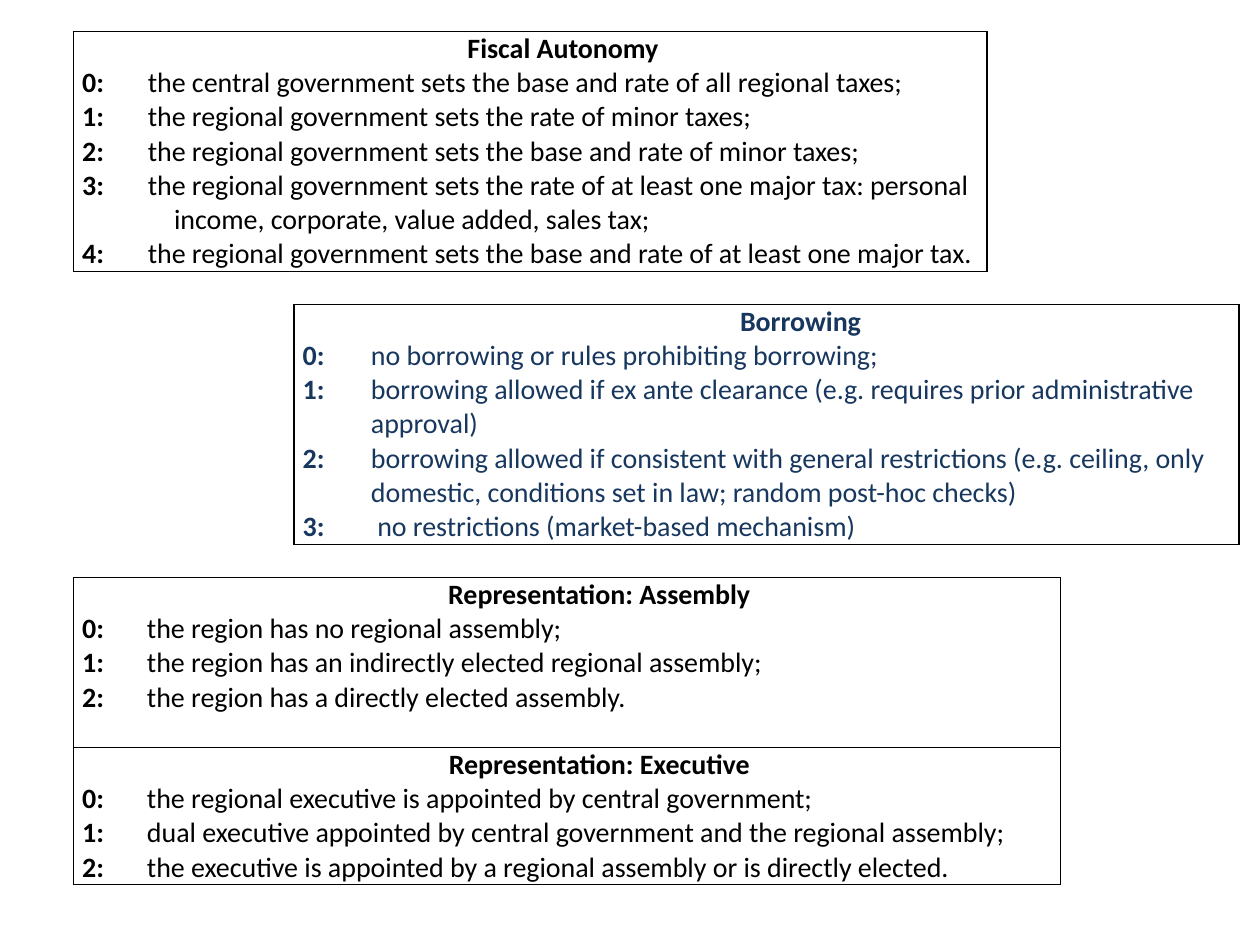
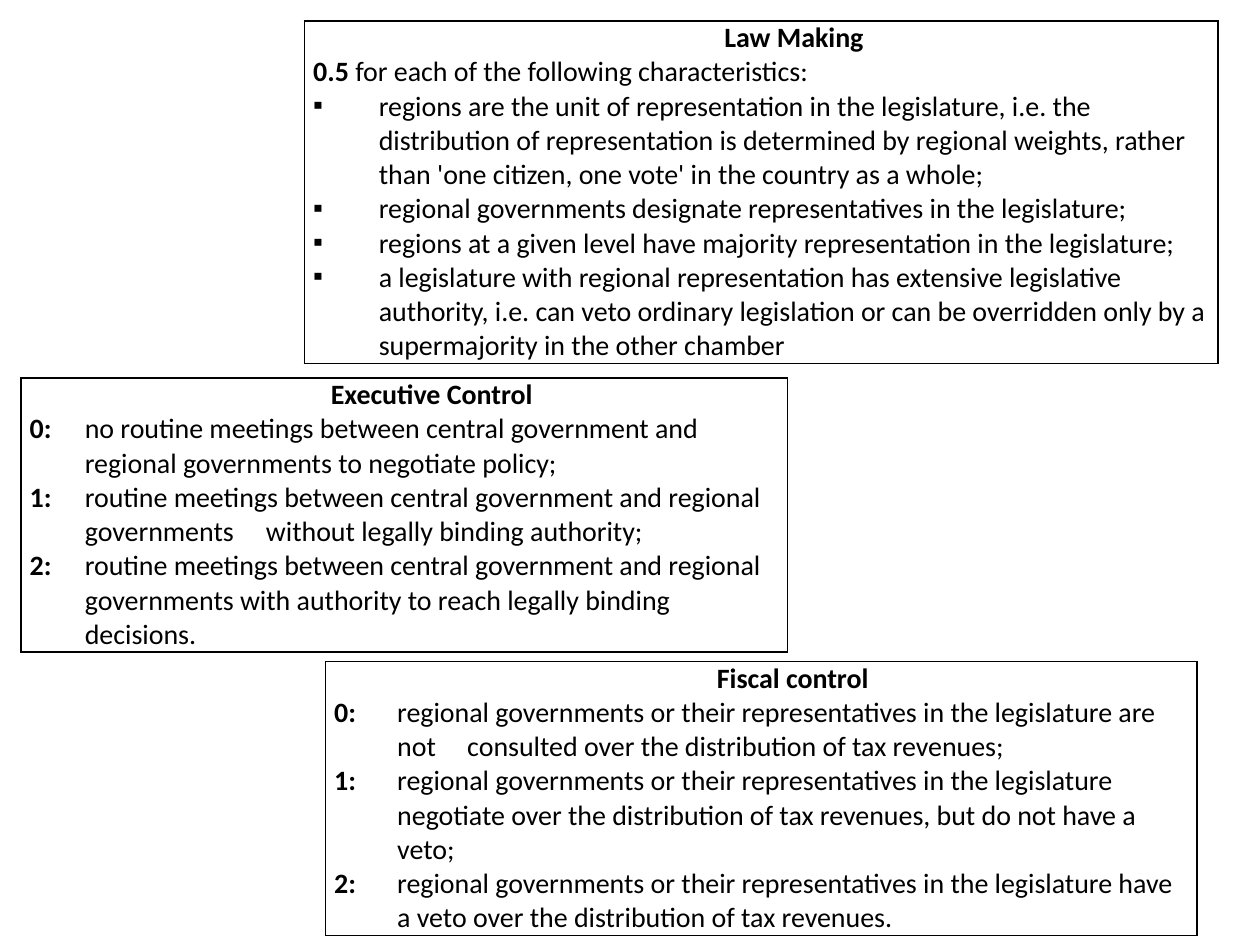
from lxml.etree import SubElement
from pptx import Presentation
from pptx.dml.color import RGBColor
from pptx.enum.text import MSO_ANCHOR, PP_ALIGN
from pptx.oxml.ns import qn
from pptx.util import Pt

BLACK = RGBColor(0x00, 0x00, 0x00)
NAVY = RGBColor(0x17, 0x37, 0x5E)
FONT = "Calibri"
BULLET_FONT = "Times New Roman"
BULLET = "▪"
SIZE = Pt(16)
LINE_PITCH = 19.2
SIDE_INSET = Pt(5)
NO_GRID_STYLE = "{2D5ABB26-0587-4C30-8999-92F81FD0307C}"

HANGING = 15

SLIDES = [
    [
        dict(at=(42, 18), cols=(37.5, 484.5), color=BLACK, sections=[
            ("Fiscal Autonomy", [
                ("0:", "the central government sets the base and rate of all regional taxes;", 1),
                ("1:", "the regional government sets the rate of minor taxes;", 1),
                ("2:", "the regional government sets the base and rate of minor taxes;", 1),
                ("3:", "the regional government sets the rate of at least one major tax: "
                       "personal income, corporate, value added, sales tax;", 2, {"hang": HANGING}),
                ("4:", "the regional government sets the base and rate of at least one major tax.", 1),
            ]),
        ]),
        dict(at=(42, 330), cols=(37, 527), color=BLACK, sections=[
            ("Representation: Assembly", [
                ("0:", "the region has no regional assembly;", 1),
                ("1:", "the region has an indirectly elected regional assembly;", 1),
                ("2:", "the region has a directly elected assembly.", 2),
            ]),
            ("Representation: Executive", [
                ("0:", "the regional executive is appointed by central government;", 1),
                ("1:", "dual executive appointed by central government and the regional assembly;", 1),
                ("2:", "the executive is appointed by a regional assembly or is directly elected.", 1),
            ]),
        ]),
        dict(at=(168, 174), cols=(39, 501), color=NAVY, sections=[
            ("Borrowing", [
                ("0:", "no borrowing or rules prohibiting borrowing;", 1),
                ("1:", "borrowing allowed if ex ante clearance (e.g. requires prior "
                       "administrative approval)", 2),
                ("2:", "borrowing allowed if consistent with general restrictions (e.g. ceiling, "
                       "only domestic, conditions set in law; random post-hoc checks)", 2),
                ("3:", " no restrictions (market-based mechanism)", 1),
            ]),
        ]),
    ],
    [
        dict(at=(174, 12), cols=(37.5, 484.5), color=BLACK, sections=[
            ("Law Making", [
                ("0.5", " for each of the following characteristics:", 1, {"span": True}),
                (BULLET, "regions are the unit of representation in the legislature, i.e. the "
                         "distribution of representation is determined by regional weights, rather "
                         "than 'one citizen, one vote' in the country as a whole;", 3),
                (BULLET, "regional governments designate representatives in the legislature;", 1),
                (BULLET, "regions at a given level have majority representation in the legislature;", 1),
                (BULLET, "a legislature with regional representation has extensive legislative "
                         "authority, i.e. can veto ordinary legislation or can be overridden only "
                         "by a supermajority in the other chamber", 3),
            ]),
        ]),
        dict(at=(12, 216), cols=(31.5, 406.5), color=BLACK, sections=[
            ("Executive Control", [
                ("0:", "no routine meetings between central government and regional governments "
                       "to negotiate policy;", 2),
                ("1:", "routine meetings between central government and regional governments\t"
                       "without legally binding authority;", 2, {"tab": 103.5}),
                ("2:", "routine meetings between central government and regional governments "
                       "with authority to reach legally binding decisions.", 3),
            ]),
        ]),
        dict(at=(186, 378), cols=(36, 462), color=BLACK, sections=[
            ("Fiscal control", [
                ("0:", "regional governments or their representatives in the legislature are not\t"
                       "consulted over the distribution of tax revenues;", 2, {"tab": 40}),
                ("1:", "regional governments or their representatives in the legislature negotiate "
                       "over the distribution of tax revenues, but do not have a veto;", 3),
                ("2:", "regional governments or their representatives in the legislature have a "
                       "veto over the distribution of tax revenues.", 2),
            ]),
        ]),
    ],
]


def add_run(p, text, color, bold=False):
    r = p.add_run()
    r.text = text
    r.font.name = BULLET_FONT if text == BULLET else FONT
    r.font.size = SIZE
    r.font.bold = bold
    r.font.color.rgb = color


def format_cell(cell, sides):
    cell.margin_left = cell.margin_right = SIDE_INSET
    cell.margin_top = cell.margin_bottom = 0
    tc_pr = cell._tc.get_or_add_tcPr()
    for side in "LRTB":
        ln = SubElement(tc_pr, qn(f"a:ln{side}"), w=str(Pt(1)))
        if side in sides:
            fill = SubElement(ln, qn("a:solidFill"))
            SubElement(fill, qn("a:srgbClr"), val=str(BLACK))
        else:
            SubElement(ln, qn("a:noFill"))
    cell.fill.background()


def format_paragraph(p, hang=0, tab=0):
    p_pr = p._p.get_or_add_pPr()
    if hang:
        p_pr.set("marL", str(Pt(hang)))
        p_pr.set("indent", str(-Pt(hang)))
    if tab:
        tabs = SubElement(p_pr, qn("a:tabLst"))
        SubElement(tabs, qn("a:tab"), pos=str(Pt(tab)), algn="l")


def add_heading(label_cell, cell, text, color):
    SubElement(label_cell.text_frame.paragraphs[0]._p, qn("a:endParaRPr"), sz=str(SIZE.centipoints))
    cell.vertical_anchor = MSO_ANCHOR.MIDDLE
    p = cell.text_frame.paragraphs[0]
    p.alignment = PP_ALIGN.CENTER
    add_run(p, text, color, bold=True)


def add_item(label_cell, cell, label, text, color, span=False, **layout):
    p = label_cell.text_frame.paragraphs[0]
    add_run(p, label, color, bold=True)
    if span:
        label_cell.merge(cell)
    else:
        p = cell.text_frame.paragraphs[0]
    format_paragraph(p, **layout)
    add_run(p, text, color)


def add_scale(s, at, cols, color, sections):
    rows = []
    for heading, items in sections:
        rows.append(("T", None, heading, 1, {}))
        for i, (label, text, lines, *options) in enumerate(items, 1):
            edge = "B" if i == len(items) else ""
            rows.append((edge, label, text, lines, options[0] if options else {}))
    height = LINE_PITCH * sum(row[3] for row in rows)
    frame = s.shapes.add_table(len(rows), 2, Pt(at[0]), Pt(at[1]), Pt(sum(cols)), Pt(height))
    table = frame.table
    table.first_row = table.horz_banding = False
    table._tbl.tblPr.find(qn("a:tableStyleId")).text = NO_GRID_STYLE
    for column, width in zip(table.columns, cols):
        column.width = Pt(width)
    for i, (edge, label, text, lines, options) in enumerate(rows):
        table.rows[i].height = Pt(LINE_PITCH * lines)
        label_cell, cell = table.cell(i, 0), table.cell(i, 1)
        format_cell(label_cell, edge + ("LR" if options.get("span") else "L"))
        format_cell(cell, edge + "R")
        if label is None:
            add_heading(label_cell, cell, text, color)
        else:
            add_item(label_cell, cell, label, text, color, **options)


def main():
    prs = Presentation()
    prs.slide_width, prs.slide_height = Pt(720), Pt(540)
    for scales in SLIDES:
        s = prs.slides.add_slide(prs.slide_layouts[6])
        for scale in scales:
            add_scale(s, **scale)
    prs.save("out.pptx")


if __name__ == "__main__":
    main()
